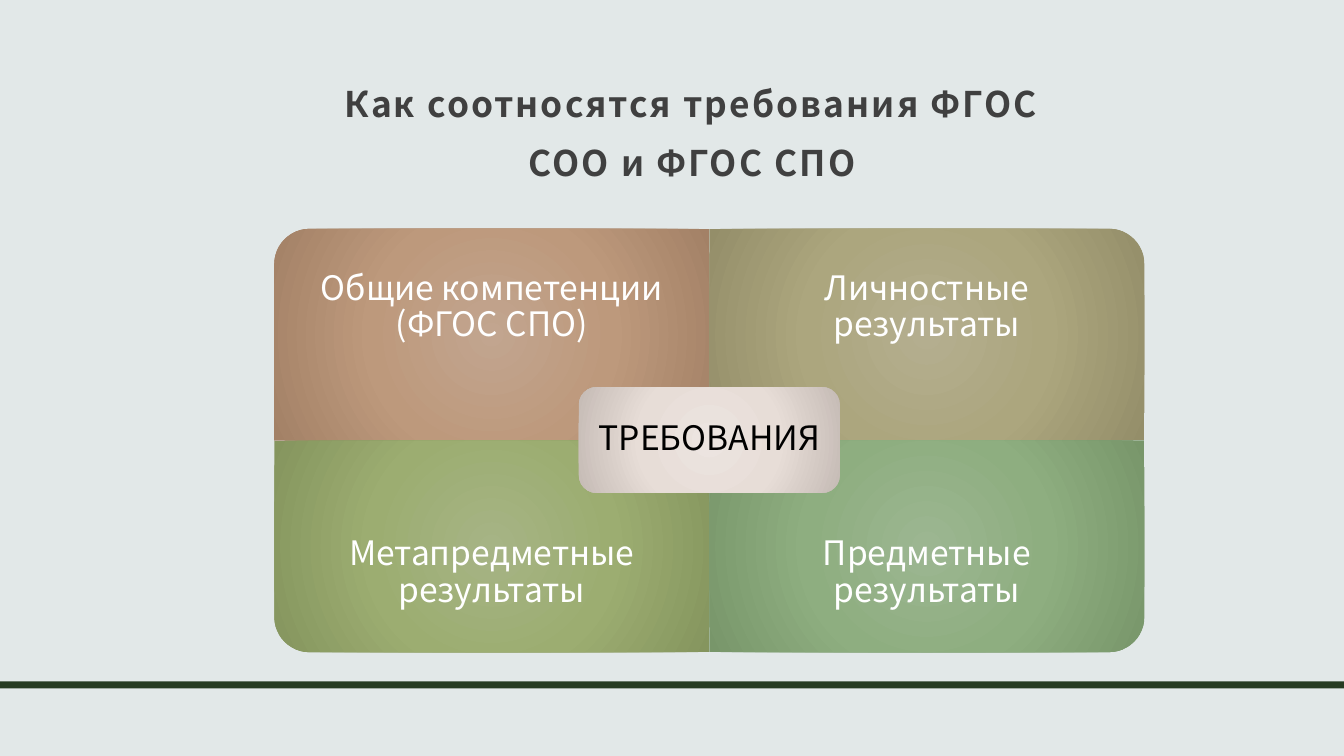
from dataclasses import dataclass

from lxml.etree import SubElement
from pptx import Presentation
from pptx.dml.color import RGBColor
from pptx.enum.shapes import MSO_SHAPE
from pptx.enum.text import MSO_ANCHOR, PP_ALIGN
from pptx.oxml.ns import qn
from pptx.shapes.autoshape import Shape
from pptx.slide import Slide
from pptx.util import Inches, Pt

FONT = "Noto Sans CJK JP"
COLORS = {
    "background": "E2E8E8",
    "bar": "263B22",
    "title": "404040",
    "light": "FFFFFF",
    "dark": "000000",
}
GRID_LEFT, GRID_TOP = 2.72, 2.27
CELL_WIDTH, CELL_HEIGHT = 4.315, 2.1
LABEL_HEIGHT = 1.57


@dataclass(frozen=True)
class Box:
    left: float
    top: float
    width: float
    height: float

    def lengths(self) -> list[int]:
        return [Inches(n) for n in (self.left, self.top, self.width, self.height)]

    def quarter_turned(self) -> "Box":
        """The box with its sides swapped about the same centre."""
        shift = (self.width - self.height) / 2
        return Box(self.left + shift, self.top - shift, self.height, self.width)


@dataclass(frozen=True)
class Quadrant:
    text: str
    column: int
    row: int
    rotation: int
    gradient: tuple[str, str, str]


QUADRANTS = [
    Quadrant("Общие компетенции (ФГОС СПО)", 0, 0, 270, ("C2A58F", "BD997C", "A38166")),
    Quadrant("Личностные результаты", 1, 0, 0, ("B4AE8F", "ACA67E", "948E69")),
    Quadrant("Метапредметные результаты", 0, 1, 180, ("A6B485", "9CAD71", "85955E")),
    Quadrant("Предметные результаты", 1, 1, 90, ("9CB691", "8EAE80", "78966A")),
]
CENTER_BOX = Box(5.74, 3.84, 2.59, 1.05)
CENTER_GRADIENT = ("ECE4E0", "E7DDD7", "C5BBB5")


def add_plain_shape(page: Slide, kind: MSO_SHAPE, box: Box) -> Shape:
    shape = page.shapes.add_shape(kind, *box.lengths())
    shape.shadow.inherit = False
    shape.line.fill.background()
    return shape


def fill_radially(shape: Shape, colors: tuple[str, str, str]) -> None:
    shape.fill.gradient()
    gradient = shape._element.spPr.find(qn("a:gradFill"))
    for child in list(gradient):
        gradient.remove(child)
    stops = SubElement(gradient, qn("a:gsLst"))
    for position, color in zip((0, 50000, 100000), colors):
        stop = SubElement(stops, qn("a:gs"), pos=str(position))
        SubElement(stop, qn("a:srgbClr"), val=color)
    circle = SubElement(gradient, qn("a:path"), path="circle")
    SubElement(circle, qn("a:fillToRect"), dict.fromkeys("ltrb", "100000"))


def add_label(
    page: Slide,
    text: str,
    box: Box,
    color: str,
    inset: float,
    size: float = 24,
    bold: bool = False,
    line_spacing: float = 0.9,
    anchor: MSO_ANCHOR = MSO_ANCHOR.MIDDLE,
    letter_spacing: float = 0,
) -> None:
    frame = page.shapes.add_textbox(*box.lengths()).text_frame
    para = frame.paragraphs[0]
    span = para.add_run()
    span.text = text
    frame_format = {"word_wrap": True, "vertical_anchor": anchor}
    for side in ("left", "top", "right", "bottom"):
        frame_format[f"margin_{side}"] = Inches(inset)
    para_format = {"alignment": PP_ALIGN.CENTER, "line_spacing": line_spacing}
    font_format = {"name": FONT, "size": Pt(size), "bold": bold}
    for target, values in (
        (frame, frame_format),
        (para, para_format),
        (span.font, font_format),
    ):
        for name, value in values.items():
            setattr(target, name, value)
    span.font.color.rgb = RGBColor.from_string(COLORS[color])
    if letter_spacing:
        span._r.get_or_add_rPr().set("spc", str(round(letter_spacing * 100)))


def add_quadrant(page: Slide, quadrant: Quadrant) -> None:
    left = GRID_LEFT + quadrant.column * CELL_WIDTH
    top = GRID_TOP + quadrant.row * CELL_HEIGHT
    cell = Box(left, top, CELL_WIDTH, CELL_HEIGHT)
    outline = cell.quarter_turned() if quadrant.rotation % 180 else cell
    shape = add_plain_shape(page, MSO_SHAPE.ROUND_1_RECTANGLE, outline)
    shape.rotation = quadrant.rotation
    fill_radially(shape, quadrant.gradient)
    label_top = top + quadrant.row * (CELL_HEIGHT - LABEL_HEIGHT)
    label_box = Box(left, label_top, CELL_WIDTH, LABEL_HEIGHT)
    add_label(page, quadrant.text, label_box, "light", inset=0.19)


def main() -> None:
    deck = Presentation()
    deck.slide_width, deck.slide_height = Inches(13.33), Inches(7.5)
    page = deck.slides.add_slide(deck.slide_layouts[6])
    page.background.fill.solid()
    page.background.fill.fore_color.rgb = RGBColor.from_string(COLORS["background"])

    bar = add_plain_shape(page, MSO_SHAPE.RECTANGLE, Box(0, 6.76, 13.33, 0.07))
    bar.fill.solid()
    bar.fill.fore_color.rgb = RGBColor.from_string(COLORS["bar"])

    add_label(
        page,
        "Как соотносятся требования ФГОС СОО и ФГОС СПО",
        Box(3.17, 0.33, 7.39, 1.61),
        "title",
        inset=0.12,
        size=25.2,
        bold=True,
        line_spacing=1.4,
        anchor=MSO_ANCHOR.BOTTOM,
        letter_spacing=1.5,
    )
    for quadrant in QUADRANTS:
        add_quadrant(page, quadrant)

    center = add_plain_shape(page, MSO_SHAPE.ROUNDED_RECTANGLE, CENTER_BOX)
    fill_radially(center, CENTER_GRADIENT)
    add_label(page, "ТРЕБОВАНИЯ", Box(5.79, 3.89, 2.49, 0.95), "dark", inset=0.1)
    deck.save("out.pptx")


if __name__ == "__main__":
    main()
